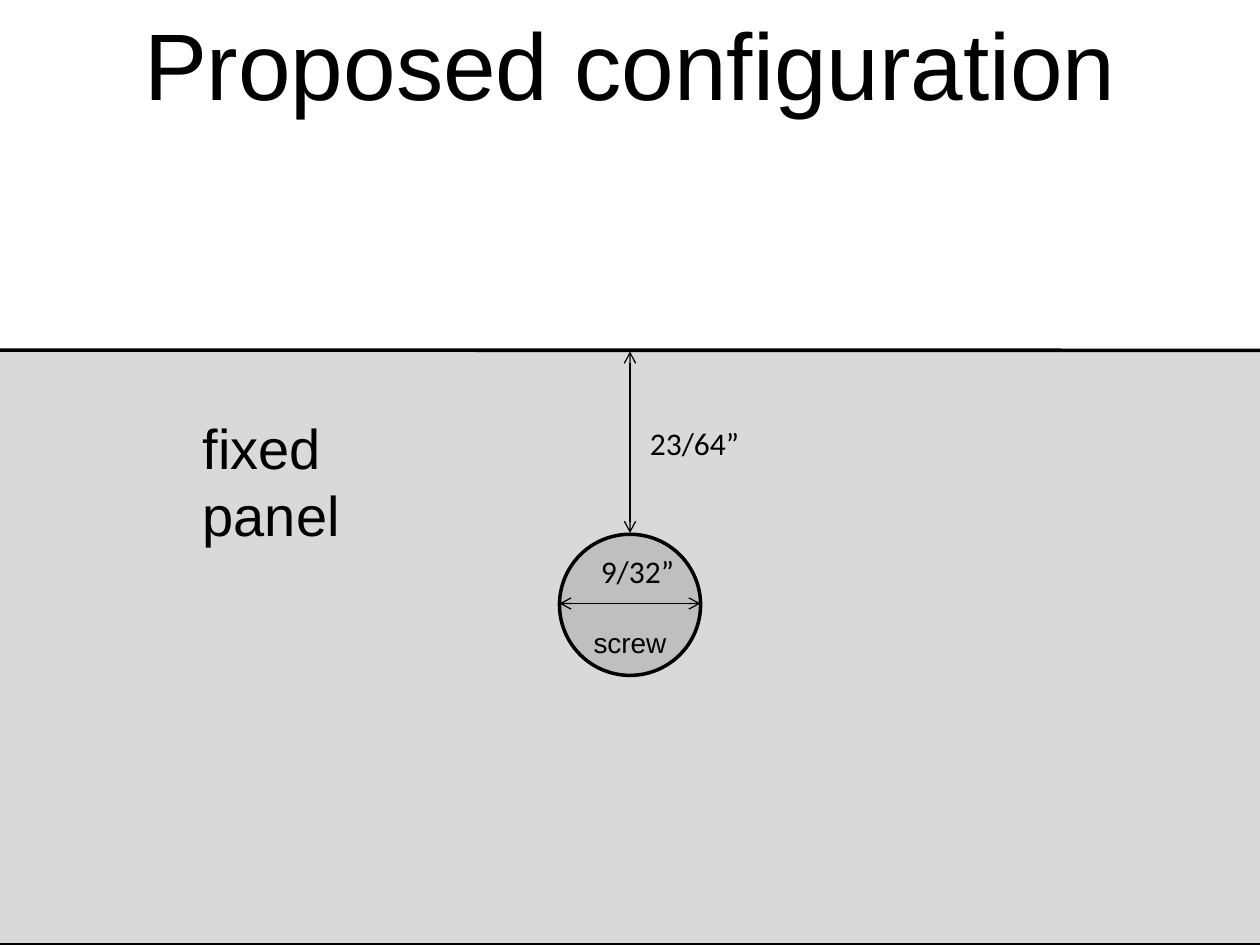
from pptx import Presentation
from pptx.dml.color import RGBColor
from pptx.enum.shapes import MSO_CONNECTOR, MSO_SHAPE
from pptx.enum.text import MSO_ANCHOR, MSO_AUTO_SIZE, PP_ALIGN
from pptx.oxml.ns import qn
from pptx.util import Inches, Pt
from lxml import etree

STRAIGHT = MSO_CONNECTOR.STRAIGHT
ROUNDED, OVAL = MSO_SHAPE.ROUNDED_RECTANGLE, MSO_SHAPE.OVAL
LEFT, CENTER = PP_ALIGN.LEFT, PP_ALIGN.CENTER
MIDDLE = MSO_ANCHOR.MIDDLE
FIT_SHAPE = MSO_AUTO_SIZE.SHAPE_TO_FIT_TEXT
BLACK = "000000"


def rgb(value):
    return RGBColor.from_string(value)


def write(frame, lines, size, font, align):
    for index, line in enumerate(lines):
        paragraph = frame.paragraphs[0] if index == 0 else frame.add_paragraph()
        paragraph.alignment = align
        run = paragraph.add_run()
        run.text = line
        run.font.size = Pt(size)
        run.font.name = font
        run.font.color.rgb = rgb(BLACK)


prs = Presentation()
prs.slide_width, prs.slide_height = Inches(10), Inches(7.5)
slide = prs.slides.add_slide(prs.slide_layouts[6])
shapes = slide.shapes

# Fixed panel and screw
bodies = []
for kind, box, fill in [
    (ROUNDED, (-0.24, 2.78, 10.56, 4.72), "D9D9D9"),
    (OVAL, (4.44, 4.24, 1.12, 1.12), "BFBFBF"),
]:
    body = shapes.add_shape(kind, *map(Inches, box))
    body.shadow.inherit = False
    body.fill.solid()
    body.fill.fore_color.rgb = rgb(fill)
    body.line.color.rgb = rgb(BLACK)
    body.line.width = Pt(2)
    bodies.append(body)
panel, screw = bodies
panel.adjustments[0] = 0.02

# Screw label, held below the diameter arrow
screw_text = screw.text_frame
screw_text.vertical_anchor = MIDDLE
screw_text.margin_top, screw_text.margin_bottom = Inches(0.6), 0
write(screw_text, ["screw"], 16, "Arial", CENTER)

# Dimension arrows: edge distance and screw diameter
for ends in [(5, 2.79, 5, 4.23), (4.44, 4.79, 5.56, 4.79)]:
    dimension = shapes.add_connector(STRAIGHT, *map(Inches, ends))
    dimension.line.color.rgb = rgb(BLACK)
    dimension.line.width = Pt(0.75)
    outline = dimension.line._get_or_add_ln()
    for end in ("a:headEnd", "a:tailEnd"):
        etree.SubElement(outline, qn(end), type="arrow")
    etree.SubElement(dimension._element.spPr, qn("a:effectLst"))

# Title, panel label and dimension values
for lines, box, size, font, align, wrap in [
    (["Proposed configuration"], (0, 0, 10, 1.01), 54, "Arial", CENTER, True),
    (["fixed", "panel"], (1.51, 3.23, 1.3, 1.18), 32, "Arial", LEFT, False),
    (["23/64”"], (5.06, 3.32, 1.15, 0.4), 18, "Calibri", LEFT, True),
    (["9/32”"], (4.67, 4.33, 1.24, 0.4), 18, "Calibri", LEFT, True),
]:
    frame = shapes.add_textbox(*map(Inches, box)).text_frame
    frame.word_wrap = wrap
    frame.auto_size = FIT_SHAPE
    write(frame, lines, size, font, align)

prs.save("out.pptx")
